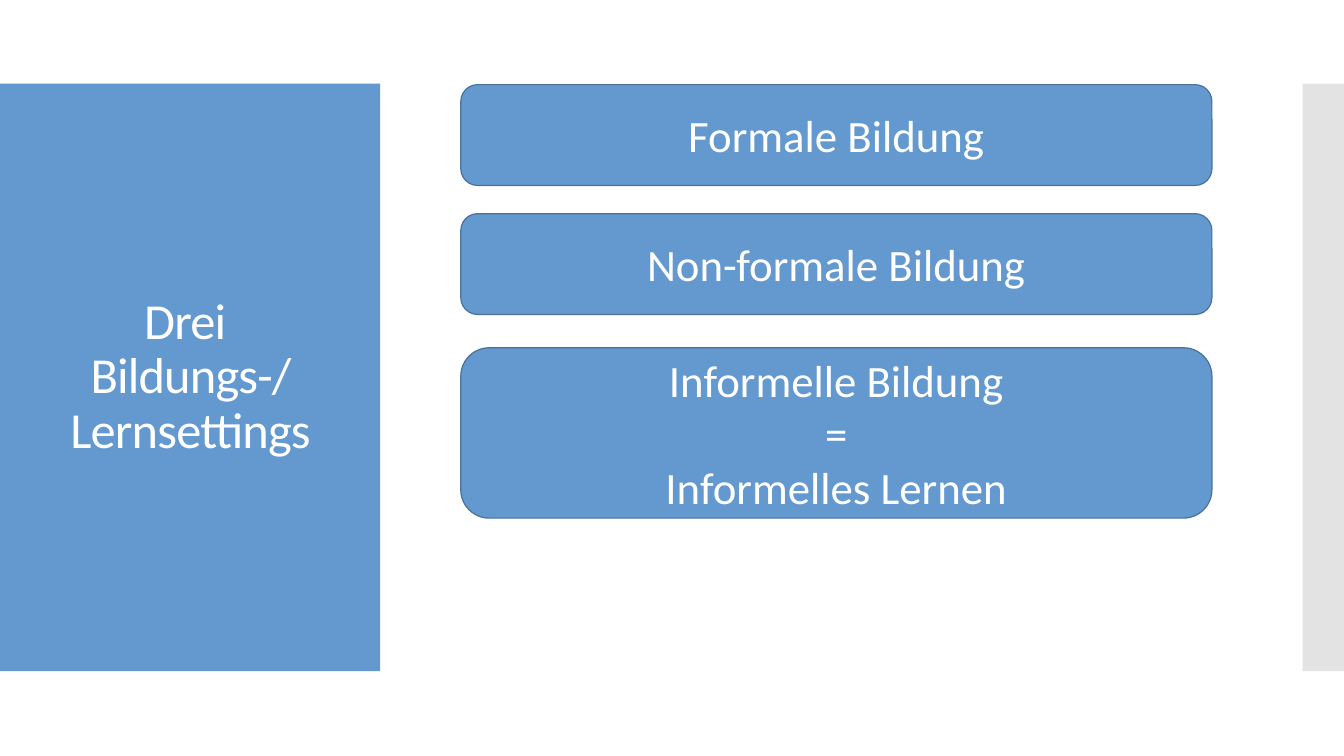
from dataclasses import dataclass

from pptx import Presentation
from pptx.dml.color import RGBColor
from pptx.enum.shapes import MSO_SHAPE
from pptx.enum.text import MSO_ANCHOR, MSO_AUTO_SIZE, PP_ALIGN
from pptx.oxml.xmlchemy import OxmlElement
from pptx.shapes.autoshape import Shape
from pptx.slide import Slide
from pptx.util import Inches, Pt


@dataclass(frozen=True)
class Theme:
    font: str = "Calibri"
    blue: RGBColor = RGBColor(0x64, 0x99, 0xCF)
    outline: RGBColor = RGBColor(0x4A, 0x71, 0x99)
    grey: RGBColor = RGBColor(0xC8, 0xC8, 0xC8)
    white: RGBColor = RGBColor(0xFF, 0xFF, 0xFF)
    title_size: int = 36
    card_size: int = 32
    outline_width: float = 0.85


@dataclass(frozen=True)
class Panel:
    left: float
    width: float
    color: RGBColor
    opacity: int = 100


@dataclass(frozen=True)
class Setting:
    top: float
    height: float
    lines: tuple[str, ...]


THEME = Theme()
PANEL_TOP, PANEL_HEIGHT = 0.83, 5.83
CARD_LEFT, CARD_WIDTH = 4.57, 7.45

PANELS = (
    Panel(0, 3.77, THEME.blue),
    Panel(12.92, 0.41, THEME.grey, opacity=50),
)
SETTINGS = (
    Setting(0.84, 1, ("Formale Bildung",)),
    Setting(2.12, 1, ("Non-formale Bildung",)),
    Setting(3.45, 1.69, ("Informelle Bildung", "=", "Informelles Lernen")),
)


def write_centred(shape: Shape, lines: tuple[str, ...], size: int) -> None:
    frame = shape.text_frame
    frame_format = {
        "text": "\n".join(lines),
        "word_wrap": True,
        "auto_size": MSO_AUTO_SIZE.NONE,
        "vertical_anchor": MSO_ANCHOR.MIDDLE,
    }
    for attribute, value in frame_format.items():
        setattr(frame, attribute, value)
    for paragraph in frame.paragraphs:
        paragraph.alignment = PP_ALIGN.CENTER
        for run in paragraph.runs:
            for attribute, value in {"name": THEME.font, "size": Pt(size)}.items():
                setattr(run.font, attribute, value)
            run.font.color.rgb = THEME.white


def add_filled(slide: Slide, kind: MSO_SHAPE, left: float, top: float,
               width: float, height: float, color: RGBColor) -> Shape:
    shape = slide.shapes.add_shape(
        kind, Inches(left), Inches(top), Inches(width), Inches(height))
    shape.shadow.inherit = False
    shape.fill.solid()
    shape.fill.fore_color.rgb = color
    return shape


def add_panel(slide: Slide, panel: Panel) -> None:
    shape = add_filled(slide, MSO_SHAPE.RECTANGLE, panel.left, PANEL_TOP,
                       panel.width, PANEL_HEIGHT, panel.color)
    shape.line.fill.background()
    if panel.opacity < 100:
        alpha = OxmlElement("a:alpha")
        alpha.set("val", str(panel.opacity * 1000))
        shape.element.spPr.find(".//{*}srgbClr").append(alpha)


def add_setting(slide: Slide, setting: Setting) -> None:
    card = add_filled(slide, MSO_SHAPE.ROUNDED_RECTANGLE, CARD_LEFT, setting.top,
                      CARD_WIDTH, setting.height, THEME.blue)
    card.line.color.rgb = THEME.outline
    card.line.width = Pt(THEME.outline_width)
    write_centred(card, setting.lines, THEME.card_size)


def place_title(slide: Slide) -> None:
    """Fill the title placeholder and bring it in front of the panels."""
    title = slide.shapes.title
    bounds = {"left": 0.28, "top": 1.23, "width": 3.22, "height": 5.03}
    for attribute, value in bounds.items():
        setattr(title, attribute, Inches(value))
    write_centred(title, ("Drei \vBildungs-/ Lernsettings",), THEME.title_size)
    paragraph = title.text_frame.paragraphs[0]
    paragraph.line_spacing = 0.9
    for run in paragraph.runs:
        run.font.element.set("spc", "-60") if hasattr(run.font, "element") else \
            run._r.get_or_add_rPr().set("spc", "-60")
    slide.shapes.element.append(title.element)


def main() -> None:
    presentation = Presentation()
    presentation.slide_width = Inches(13.33)
    presentation.slide_height = Inches(7.5)
    slide = presentation.slides.add_slide(
        presentation.slide_layouts.get_by_name("Title Only"))
    for panel in PANELS:
        add_panel(slide, panel)
    place_title(slide)
    for setting in SETTINGS:
        add_setting(slide, setting)
    presentation.save("out.pptx")


if __name__ == "__main__":
    main()
